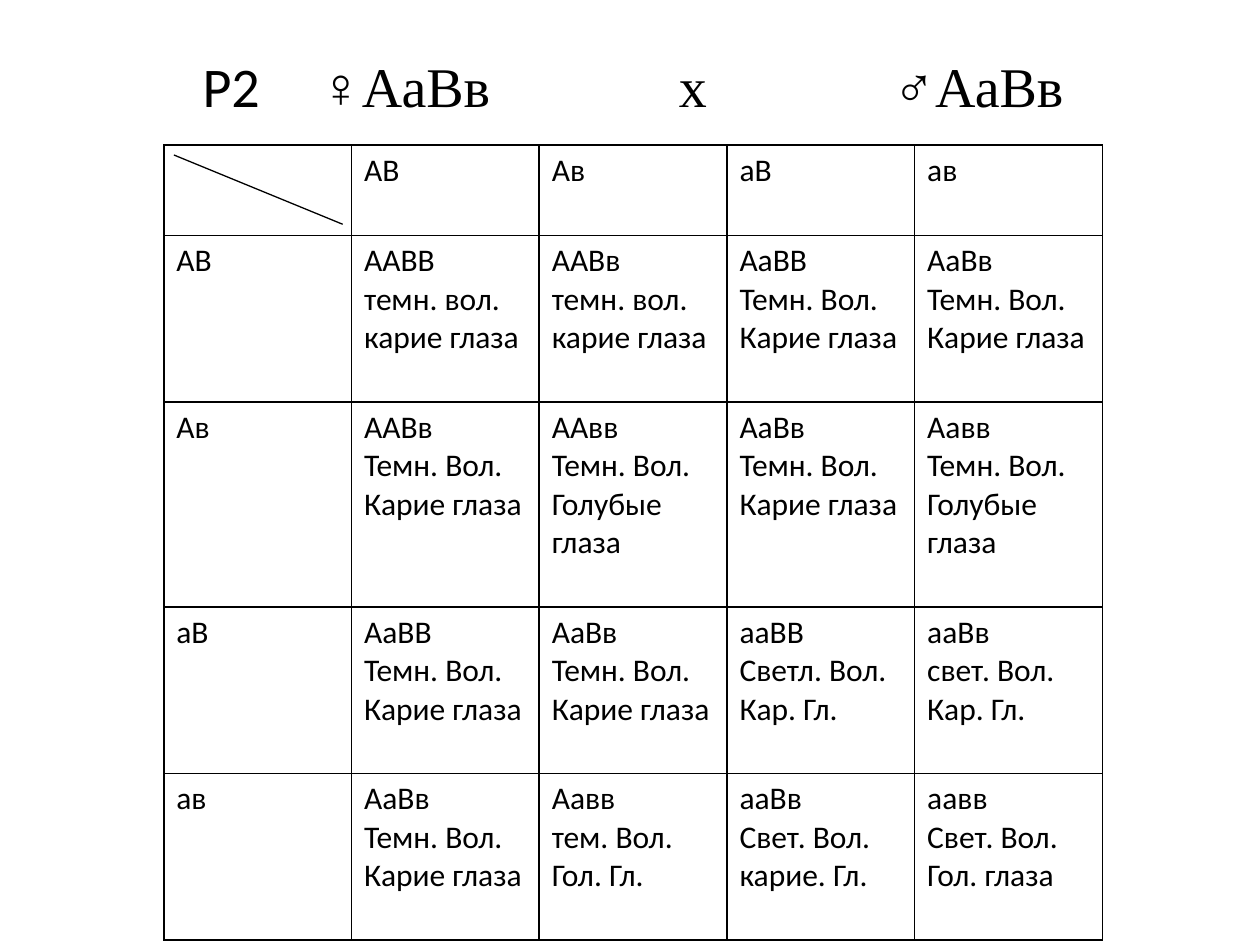
from lxml import etree
from pptx import Presentation
from pptx.dml.color import RGBColor
from pptx.enum.shapes import MSO_CONNECTOR
from pptx.oxml.ns import qn
from pptx.util import Inches, Pt

BLACK = RGBColor(0, 0, 0)
WHITE = RGBColor(255, 255, 255)
STRAIGHT = MSO_CONNECTOR.STRAIGHT
SANS, SERIF = "Calibri", "Times New Roman"

COL_WIDTH = 1.49
ROW_HEIGHTS = [0.72, 1.32, 1.63, 1.32, 1.32]
TABS = [1.0, 1.93, 4.78, 6.48]
CROSS = [("\tР2", SANS), ("\t♀АаВв\tх\t♂АаВв", SERIF)]

GAMETES = ["АВ", "Ав", "аВ", "ав"]
DARK = "\nТемн. Вол.\nКарие глаза"
LOWER = "\nтемн. вол.\nкарие глаза"
BLUE = "\nТемн. Вол.\nГолубые глаза"
OFFSPRING = [
    ["ААВВ" + LOWER, "ААВв" + LOWER, "АаВВ" + DARK, "АаВв" + DARK],
    ["ААВв" + DARK, "ААвв" + BLUE, "АаВв" + DARK, "Аавв" + BLUE],
    ["АaВВ" + DARK, "АаВв" + DARK,
     "ааВВ\nСветл. Вол.\nКар. Гл.", "ааВв\nсвет. Вол.\nКар. Гл."],
    ["АаВв" + DARK, "Аавв\nтем. Вол.\nГол. Гл.",
     "ааВв\nСвет. Вол.\nкарие. Гл.", "аавв\nСвет. Вол. Гол. глаза"],
]


def style(font, name, size):
    for key, value in {"name": name, "size": Pt(size)}.items():
        setattr(font, key, value)
    font.color.rgb = BLACK


def add_heading(slide):
    """Write the parents of the cross on one line, set out by tab stops."""
    box = slide.shapes.add_textbox(
        Inches(0.51), Inches(0.36), Inches(9), Inches(5.34))
    box.text_frame.word_wrap = True
    line = box.text_frame.paragraphs[0]
    stops = etree.SubElement(line._p.get_or_add_pPr(), qn("a:tabLst"))
    for tab in TABS:
        etree.SubElement(stops, qn("a:tab"), pos=str(Inches(tab)), algn="l")
    for text, name in CROSS:
        run = line.add_run()
        run.text = text
        style(run.font, name, 32)


def add_borders(cell):
    props = cell._tc.get_or_add_tcPr()
    for i, side in enumerate(("a:lnL", "a:lnR", "a:lnT", "a:lnB")):
        edge = etree.Element(qn(side), w=str(Pt(1)))
        fill = etree.SubElement(edge, qn("a:solidFill"))
        etree.SubElement(fill, qn("a:srgbClr"), val=str(BLACK))
        props.insert(i, edge)


def fill_cell(cell, text):
    cell.fill.solid()
    cell.fill.fore_color.rgb = WHITE
    add_borders(cell)
    cell.text = text
    for line in cell.text_frame.paragraphs:
        style(line.font, SANS, 18)
        for run in line.runs:
            style(run.font, SANS, 18)


def add_grid(slide):
    """Add the Punnett square with gametes along the top and left."""
    rows = [[""] + GAMETES]
    rows += [[name] + kids for name, kids in zip(GAMETES, OFFSPRING)]
    count = len(rows[0])
    table = slide.shapes.add_table(
        len(rows), count, Inches(1.3), Inches(1.15),
        Inches(COL_WIDTH * count), Inches(sum(ROW_HEIGHTS))).table
    table.first_row = table.horz_banding = False
    for col in table.columns:
        col.width = Inches(COL_WIDTH)
    for r, (row, height) in enumerate(zip(rows, ROW_HEIGHTS)):
        table.rows[r].height = Inches(height)
        for c, text in enumerate(row):
            fill_cell(table.cell(r, c), text)


def add_slash(slide):
    """Strike the empty corner cell with a diagonal line."""
    slash = slide.shapes.add_connector(
        STRAIGHT, Inches(1.38), Inches(1.23), Inches(2.72), Inches(1.78))
    slash.line.color.rgb = BLACK
    slash.line.width = Pt(0.75)
    etree.SubElement(slash._element.spPr, qn("a:effectLst"))


def main():
    deck = Presentation()
    deck.slide_width, deck.slide_height = Inches(10), Inches(7.5)
    slide = deck.slides.add_slide(deck.slide_layouts[6])
    add_heading(slide)
    add_grid(slide)
    add_slash(slide)
    deck.save("out.pptx")


if __name__ == "__main__":
    main()
